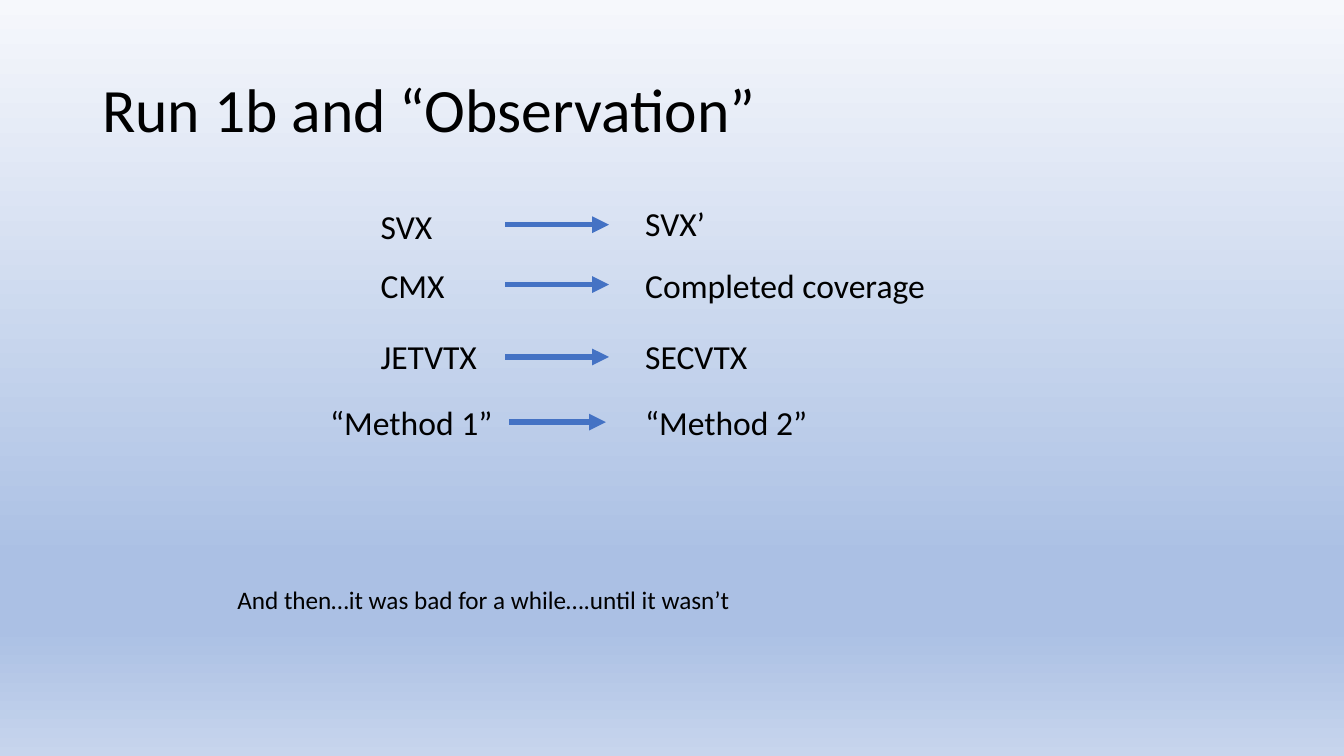
from copy import deepcopy

from pptx import Presentation
from pptx.dml.color import RGBColor
from pptx.enum.shapes import MSO_CONNECTOR as Connector
from pptx.enum.text import MSO_ANCHOR as Anchor, PP_ALIGN as Align
from pptx.oxml.ns import qn
from pptx.oxml.xmlchemy import OxmlElement
from pptx.util import Pt

EMU_PER_PX = 9525
FONT = "Calibri"
BLACK = RGBColor(0x00, 0x00, 0x00)
ARROW_BLUE = RGBColor(0x44, 0x72, 0xC4)
PALE_BLUE = RGBColor(0xF6, 0xF8, 0xFC)
MID_BLUE = RGBColor(0xAB, 0xC0, 0xE4)
LIGHT_BLUE = RGBColor(0xC7, 0xD5, 0xED)
BACKGROUND_STOPS = [(0, PALE_BLUE), (0.74, MID_BLUE), (0.83, MID_BLUE), (1, LIGHT_BLUE)]

ROW_HEIGHT = 48
AFTER_LEFT = 605
UPGRADES = [
    ("SVX", (353, 191, 84), (481, 580, 214), "SVX’", (189, 84)),
    ("CMX", (353, 248, 84), (481, 580, 271), "Completed coverage", (248, 324)),
    ("JETVTX", (353, 315, 128), (481, 580, 340), "SECVTX", (315, 149)),
    ("“Method 1”", (305, 378, 180), (485, 577, 402), "“Method 2”", (378, 191)),
]


def px(length):
    return length * EMU_PER_PX


def paint_background(page):
    fill = page.background.fill
    fill.gradient()
    fill.gradient_angle = 270
    stop_list = page.element.find(".//" + qn("a:gsLst"))
    while len(stop_list) < len(BACKGROUND_STOPS):
        stop_list.append(deepcopy(stop_list[-1]))
    for stop, (position, color) in zip(fill.gradient_stops, BACKGROUND_STOPS):
        stop.position = position
        stop.color.rgb = color


def add_text(page, text, left, top, width, height, size, align=Align.LEFT):
    box = page.shapes.add_textbox(px(left), px(top), px(width), px(height))
    frame = box.text_frame
    frame.word_wrap = True
    frame.text = text
    para = frame.paragraphs[0]
    para.alignment = align
    span = para.runs[0]
    span.font.name = FONT
    span.font.size = Pt(size)
    span.font.color.rgb = BLACK
    return box


def add_title(page, text):
    box = add_text(page, text, 88, 38, 1104, 139, 44)
    box.text_frame.vertical_anchor = Anchor.MIDDLE
    box.text_frame.paragraphs[0].line_spacing = 0.9


def add_arrow(page, start, end, middle):
    arrow = page.shapes.add_connector(
        Connector.STRAIGHT, px(start), px(middle), px(end), px(middle))
    arrow.line.color.rgb = ARROW_BLUE
    arrow.line.width = Pt(4)
    head = OxmlElement("a:tailEnd")
    head.set("type", "triangle")
    arrow.line._get_or_add_ln().append(head)
    arrow.element.spPr.append(OxmlElement("a:effectLst"))


def add_upgrade(page, before, before_place, arrow_place, after, after_place):
    add_text(page, before, *before_place, ROW_HEIGHT, 24)
    add_arrow(page, *arrow_place)
    add_text(page, after, AFTER_LEFT, *after_place, ROW_HEIGHT, 24)


def main():
    deck = Presentation()
    deck.slide_width = px(1280)
    deck.slide_height = px(720)
    page = deck.slides.add_slide(deck.slide_layouts[6])
    paint_background(page)
    add_title(page, "Run 1b and “Observation”")
    for upgrade in UPGRADES:
        add_upgrade(page, *upgrade)
    add_text(page, "And then…it was bad for a while….until it wasn’t",
             125, 552, 671, 38, 18, Align.CENTER)
    deck.save("out.pptx")


if __name__ == "__main__":
    main()
